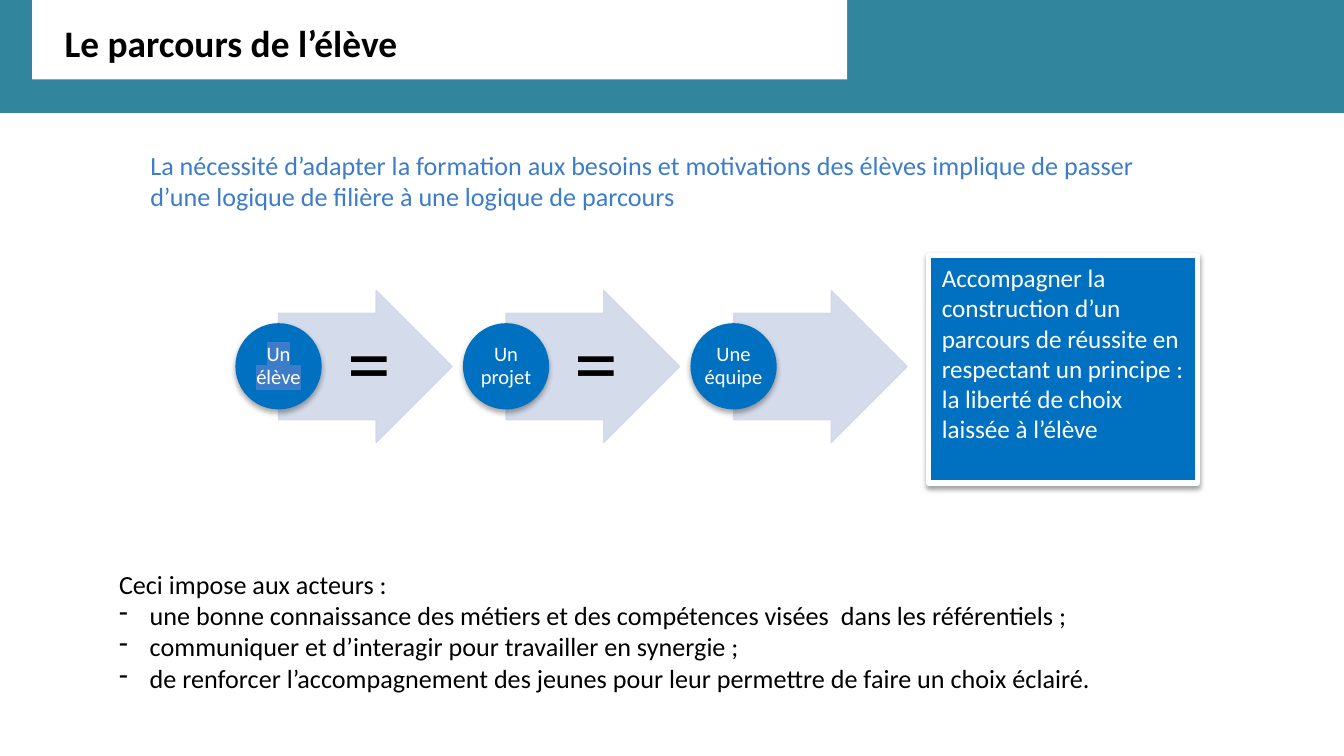
from dataclasses import dataclass
from typing import Optional

from lxml.etree import SubElement
from pptx import Presentation
from pptx.dml.color import RGBColor
from pptx.enum.shapes import MSO_SHAPE as Preset
from pptx.enum.text import MSO_ANCHOR as Anchor, MSO_AUTO_SIZE as AutoSize, PP_ALIGN as Align
from pptx.oxml.ns import qn
from pptx.util import Cm, Pt

FONT = "Calibri"
BLACK = RGBColor(0, 0, 0)
WHITE = RGBColor(0xFF, 0xFF, 0xFF)
TEAL = RGBColor(0x31, 0x85, 0x9C)
BLUE = RGBColor(0x00, 0x70, 0xC0)
SKY = RGBColor(0x3D, 0x7C, 0xC9)
PALE = RGBColor(0xD0, 0xD8, 0xE8)


@dataclass(frozen=True)
class Box:
    left: float
    top: float
    width: float
    height: float

    def lengths(self) -> tuple:
        return Cm(self.left), Cm(self.top), Cm(self.width), Cm(self.height)


@dataclass(frozen=True)
class Step:
    label: str
    linked: bool
    highlight: Optional[RGBColor] = None


STEPS = [Step("Un élève", True, SKY), Step("Un projet", True), Step("Une équipe", False)]
STEP_LEFT, STEP_PITCH, STEP_MIDDLE = 4.45, 4.3, 6.92
CIRCLE_SIZE = 1.63
ACTORS = [
    "Ceci impose aux acteurs :",
    "une bonne connaissance des métiers et des compétences visées  dans les référentiels ;",
    "communiquer et d’interagir pour travailler en synergie ;",
    "de renforcer l’accompagnement des jeunes pour leur permettre de faire un choix éclairé.",
]


def set_bullet(paragraph, mark: Optional[str]) -> None:
    """Give the paragraph a hanging mark, or none at all."""
    properties = paragraph._p.get_or_add_pPr()
    indent = Cm(0.58) if mark else 0
    properties.set("marL", str(indent))
    properties.set("indent", str(-indent))
    if mark:
        SubElement(properties, qn("a:buChar"), char=mark)
    else:
        SubElement(properties, qn("a:buNone"))


def write(shape, *lines: str, size: float, color: RGBColor, bold: bool = False,
          align=Align.LEFT, anchor=Anchor.TOP, margins=(0.25, 0.13, 0.25, 0.13),
          spacing: float = 1, wrap: bool = True, bullet: Optional[str] = None,
          highlight: Optional[RGBColor] = None) -> None:
    """Write one paragraph per line; the bullet goes on all but the first."""
    frame = shape.text_frame
    frame.auto_size = AutoSize.NONE
    frame.word_wrap = wrap
    frame.vertical_anchor = anchor
    (frame.margin_left, frame.margin_top,
     frame.margin_right, frame.margin_bottom) = map(Cm, margins)
    for index, line in enumerate(lines):
        paragraph = frame.add_paragraph() if index else frame.paragraphs[0]
        set_bullet(paragraph, bullet if index else None)
        paragraph.alignment = align
        paragraph.line_spacing = spacing
        paragraph.space_before = Pt(0)
        run = paragraph.add_run()
        run.text = line
        font = run.font
        font.name, font.size, font.bold = FONT, Pt(size), bold
        font.color.rgb = color
        if highlight is not None:
            properties = run._r.get_or_add_rPr()
            mark = SubElement(properties, qn("a:highlight"))
            SubElement(mark, qn("a:srgbClr"), val=str(highlight))
            properties.find(qn("a:latin")).addprevious(mark)


def add_filled(slide, preset, box: Box, fill: RGBColor,
               line: Optional[RGBColor] = None, line_width: float = 0.75):
    shape = slide.shapes.add_shape(preset, *box.lengths())
    shape.shadow.inherit = False
    shape.fill.solid()
    shape.fill.fore_color.rgb = fill
    if line is None:
        shape.line.fill.background()
    else:
        shape.line.color.rgb = line
        shape.line.width = Pt(line_width)
    return shape


def add_shadow(shape, distance: float, opacity: int) -> None:
    effects = shape._element.spPr.find(qn("a:effectLst"))
    shadow = SubElement(effects, qn("a:outerShdw"), blurRad=str(Pt(3.1)),
                        dist=str(Pt(distance)), dir="5400000", rotWithShape="0")
    color = SubElement(shadow, qn("a:srgbClr"), val=str(BLACK))
    SubElement(color, qn("a:alpha"), val=str(opacity * 1000))


def set_opacity(shape, percent: int) -> None:
    """Apply the opacity to both fill and line."""
    for color in shape._element.spPr.iter(qn("a:srgbClr")):
        SubElement(color, qn("a:alpha"), val=str(percent * 1000))


def add_step(slide, step: Step, left: float) -> None:
    center = left + CIRCLE_SIZE / 2
    arrow = add_filled(slide, Preset.RIGHT_ARROW,
                       Box(center, STEP_MIDDLE - 1.43, 3.28, 2.87), PALE, line=PALE)
    arrow.adjustments[0], arrow.adjustments[1] = 0.7, 0.5
    set_opacity(arrow, 90)
    if step.linked:
        equals = slide.shapes.add_textbox(*Box(left + 1.65, STEP_MIDDLE - 1, 1.6, 2).lengths())
        write(equals, "=", size=47, color=BLACK, align=Align.CENTER, anchor=Anchor.MIDDLE,
              margins=(0.33, 0.08, 0.18, 0.08), spacing=0.9)
    circle = add_filled(slide, Preset.OVAL,
                        Box(left, STEP_MIDDLE - CIRCLE_SIZE / 2, CIRCLE_SIZE, CIRCLE_SIZE), BLUE)
    add_shadow(circle, distance=1.8, opacity=35)
    write(circle, step.label, size=11, color=WHITE, align=Align.CENTER, anchor=Anchor.MIDDLE,
          margins=(0.02,) * 4, spacing=0.9, highlight=step.highlight)


def place_in_front(shape, box: Box) -> None:
    shape.left, shape.top, shape.width, shape.height = box.lengths()
    shape._element.getparent().append(shape._element)


def main() -> None:
    presentation = Presentation()
    presentation.slide_width, presentation.slide_height = Cm(25.4), Cm(14.28)
    slide = presentation.slides.add_slide(presentation.slide_layouts[1])

    add_filled(slide, Preset.RECTANGLE, Box(0, 0, 25.4, 2.13), TEAL, line=TEAL, line_width=0.5)
    add_filled(slide, Preset.RECTANGLE, Box(0.61, 0, 15.4, 1.5), WHITE)

    actors = slide.shapes.add_textbox(*Box(2, 10.6, 21.4, 2.64).lengths())
    write(actors, *ACTORS, size=14, color=BLACK, bullet="-")

    for index, step in enumerate(STEPS):
        add_step(slide, step, STEP_LEFT + index * STEP_PITCH)

    goal = add_filled(slide, Preset.RECTANGLE, Box(17.55, 4.83, 5.08, 4.29), BLUE,
                      line=WHITE, line_width=3)
    add_shadow(goal, distance=1.6, opacity=38)
    write(goal, "Accompagner la construction d’un parcours de réussite en respectant "
          "un principe : la liberté de choix laissée à l’élève", size=13.5, color=WHITE)

    body = slide.placeholders[1]
    place_in_front(body, Box(2.59, 2.69, 20.12, 1.6))
    write(body, "La nécessité d’adapter la formation aux besoins et motivations des élèves "
          "implique de passer d’une logique de filière à une logique de parcours",
          size=14, color=SKY)

    title = slide.shapes.title
    place_in_front(title, Box(0.97, 0.25, 6.86, 1.12))
    write(title, "Le parcours de l’élève", size=20, color=BLACK, bold=True, wrap=False)

    presentation.save("out.pptx")


if __name__ == "__main__":
    main()
